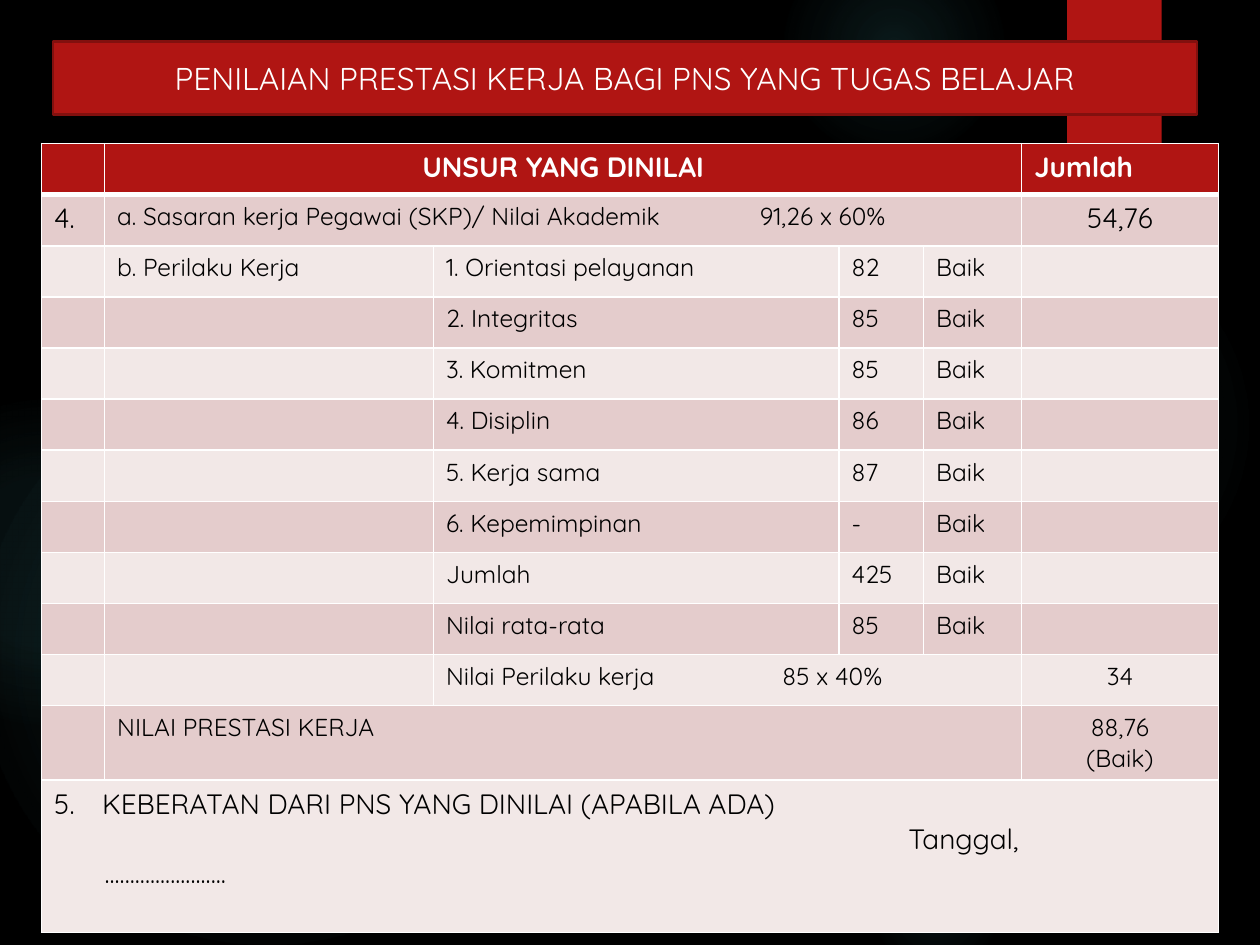
from lxml import etree
from pptx import Presentation
from pptx import util as u
from pptx.dml.color import RGBColor
from pptx.enum import shapes, text
from pptx.oxml import parse_xml
from pptx.oxml.ns import qn, nsdecls

RED = RGBColor(0xB0, 0x15, 0x13)
DARK = RGBColor(0x82, 0x10, 0x0E)
ROSE = RGBColor(0xE4, 0xCC, 0xCC)
PALE = RGBColor(0xF2, 0xE8, 0xE7)
WHITE = RGBColor(0xFF, 0xFF, 0xFF)
BLACK = RGBColor(0, 0, 0)
GLOW = RGBColor(0x50, 0xB9, 0xC1)
MID, LEFT = text.PP_ALIGN.CENTER, text.PP_ALIGN.LEFT


def write(frame, words, size=14, color=BLACK, bold=False, align=LEFT, tab=None):
    """Fill a text frame, one paragraph for each line of words."""
    for n, line in enumerate(words.split("\n")):
        para = frame.paragraphs[0] if n == 0 else frame.add_paragraph()
        para.alignment = align
        run = para.add_run()
        run.text = line
        font = run.font
        font.name, font.size, font.bold = "Quicksand", u.Pt(size), bold
        font.color.rgb = color
        if tab:
            stops = etree.SubElement(para._p.get_or_add_pPr(), qn("a:tabLst"))
            etree.SubElement(stops, qn("a:tab"), pos=str(u.Inches(tab)), algn="l")


def add(kind, x, y, wide, high):
    """Add a plain shape, with no line and no shadow."""
    shape = slide.shapes.add_shape(kind, *map(u.Inches, (x, y, wide, high)))
    shape.shadow.inherit = False
    shape.line.fill.background()
    return shape


deck = Presentation()
deck.slide_width, deck.slide_height = u.Inches(10), u.Inches(7.5)
slide = deck.slides.add_slide(deck.slide_layouts[5])
back = slide.background.fill
back.solid()
back.fore_color.rgb = BLACK

# Soft glows: left, top, size, then opacity at centre and at 36 %, and the end
glows = [
    (6.89, 1.83, 3.08, 7, 6, 69),
    (6.22, -0.5, 1.75, 14, 7, 73),
    (6.89, 6.67, 1.08, 9, 5, 66),
    (-0.17, 2.92, 4.58, 11, 10, 75),
    (-0.92, 3.17, 2.58, 8, 8, 72),
]
for x, y, size, core, ring, end in glows:
    disc = add(shapes.MSO_SHAPE.OVAL, x, y, size, size)
    stops = "".join(
        f'<a:gs pos="{pos * 1000}"><a:srgbClr val="{GLOW}">'
        f'<a:alpha val="{alpha * 1000}"/></a:srgbClr></a:gs>'
        for pos, alpha in ((0, core), (36, ring), (end, 0)))
    grad = parse_xml(
        f'<a:gradFill {nsdecls("a")}><a:gsLst>{stops}</a:gsLst><a:path path="circle">'
        '<a:fillToRect l="50000" t="50000" r="50000" b="50000"/></a:path></a:gradFill>')
    disc._element.spPr.find(qn("a:prstGeom")).addnext(grad)

# Ribbon behind the title
ribbon = add(shapes.MSO_SHAPE.RECTANGLE, 8.47, 0, 0.75, 1.2)
ribbon.fill.solid()
ribbon.fill.fore_color.rgb = RED

# Title banner, in front of the ribbon
title = slide.shapes.title
title.left, title.top = u.Inches(0.42), u.Inches(0.33)
title.width, title.height = u.Inches(9.08), u.Inches(0.58)
title._element.spPr.append(parse_xml(
    f'<a:prstGeom {nsdecls("a")} prst="roundRect"><a:avLst/></a:prstGeom>'))
title.fill.solid()
title.fill.fore_color.rgb = RED
title.line.color.rgb, title.line.width = DARK, u.Pt(1.5)
frame = title.text_frame
frame.auto_size = text.MSO_AUTO_SIZE.NONE
frame.vertical_anchor = text.MSO_ANCHOR.MIDDLE
write(frame, "PENILAIAN PRESTASI KERJA BAGI PNS YANG TUGAS BELAJAR",
      size=18, color=WHITE, align=MID)
slide.shapes._spTree.append(title._element)

# Table content
marks = [
    ("1. Orientasi pelayanan", "82"), ("2. Integritas", "85"),
    ("3. Komitmen", "85"), ("4. Disiplin", "86"), ("5. Kerja sama", "87"),
    ("6. Kepemimpinan", "-"), ("Jumlah", "425"), ("Nilai rata-rata", "85"),
]
rows = [
    ["", "UNSUR YANG DINILAI", "", "", "", "Jumlah"],
    ["4.", "a. Sasaran kerja Pegawai (SKP)/ Nilai Akademik\t91,26 x 60%",
     "", "", "", "54,76"],
    *[["", "" if n else "b. Perilaku Kerja", name, mark, "Baik", ""]
      for n, (name, mark) in enumerate(marks)],
    ["", "", "Nilai Perilaku kerja\t85 x 40%", "", "", "34"],
    ["", "NILAI PRESTASI KERJA", "", "", "", "88,76\n(Baik)"],
    ["KEBERATAN DARI PNS YANG DINILAI (APABILA ADA)\nTanggal,\n"
     "........................", "", "", "", "", ""],
]
widths = [0.5, 2.61, 3.22, 0.67, 0.78, 1.56]
heights = [7.5 / 18.5] * 11 + [0.59, 1.21]
spans = [(0, 1, 4), (1, 1, 4), (10, 2, 4), (11, 1, 4), (12, 0, 5)]
tabs = {(1, 1): 5.1, (10, 2): 2.67}
large = [(1, 0), (1, 5), (12, 0)]

# Table grid
table = slide.shapes.add_table(
    len(rows), len(widths), u.Inches(0.33), u.Inches(1.14),
    u.Inches(sum(widths)), u.Inches(sum(heights))).table
table.first_row = table.horz_banding = False
for col, wide in zip(table.columns, widths):
    col.width = u.Inches(wide)
for row, high in zip(table.rows, heights):
    row.height = u.Inches(high)
for r, first, last in spans:
    table.cell(r, first).merge(table.cell(r, last))

# Cells: borders, fill, text
for r, row in enumerate(rows):
    for c, words in enumerate(row):
        cell = table.cell(r, c)
        props = cell._tc.get_or_add_tcPr()
        for side in "LRTB":
            thick = 3 if (r, side) in ((0, "B"), (1, "T")) else 1
            props.append(parse_xml(
                f'<a:ln{side} {nsdecls("a")} w="{u.Pt(thick)}"><a:solidFill>'
                f'<a:srgbClr val="{WHITE}"/></a:solidFill></a:ln{side}>'))
        cell.fill.solid()
        cell.fill.fore_color.rgb = RED if r == 0 else ROSE if r % 2 else PALE
        if words:
            head = r == 0
            write(cell.text_frame, words, bold=head, tab=tabs.get((r, c)),
                  size=16 if head or (r, c) in large else 14,
                  color=WHITE if head else BLACK,
                  align=MID if (r, c) == (0, 1) or (r and c == 5) else LEFT)

# Numbering and indents of the last row
for n, (para, dent) in enumerate(
        zip(table.cell(12, 0).text_frame.paragraphs, (-0.38, 6.4, 0.02))):
    props = para._p.get_or_add_pPr()
    props.set("marL", str(u.Inches(0.38)))
    props.set("indent", str(u.Inches(dent)))
    if n == 0:
        etree.SubElement(props, qn("a:buFont"), typeface="+mj-lt")
        etree.SubElement(props, qn("a:buAutoNum"), type="arabicPeriod", startAt="5")

deck.save("out.pptx")
